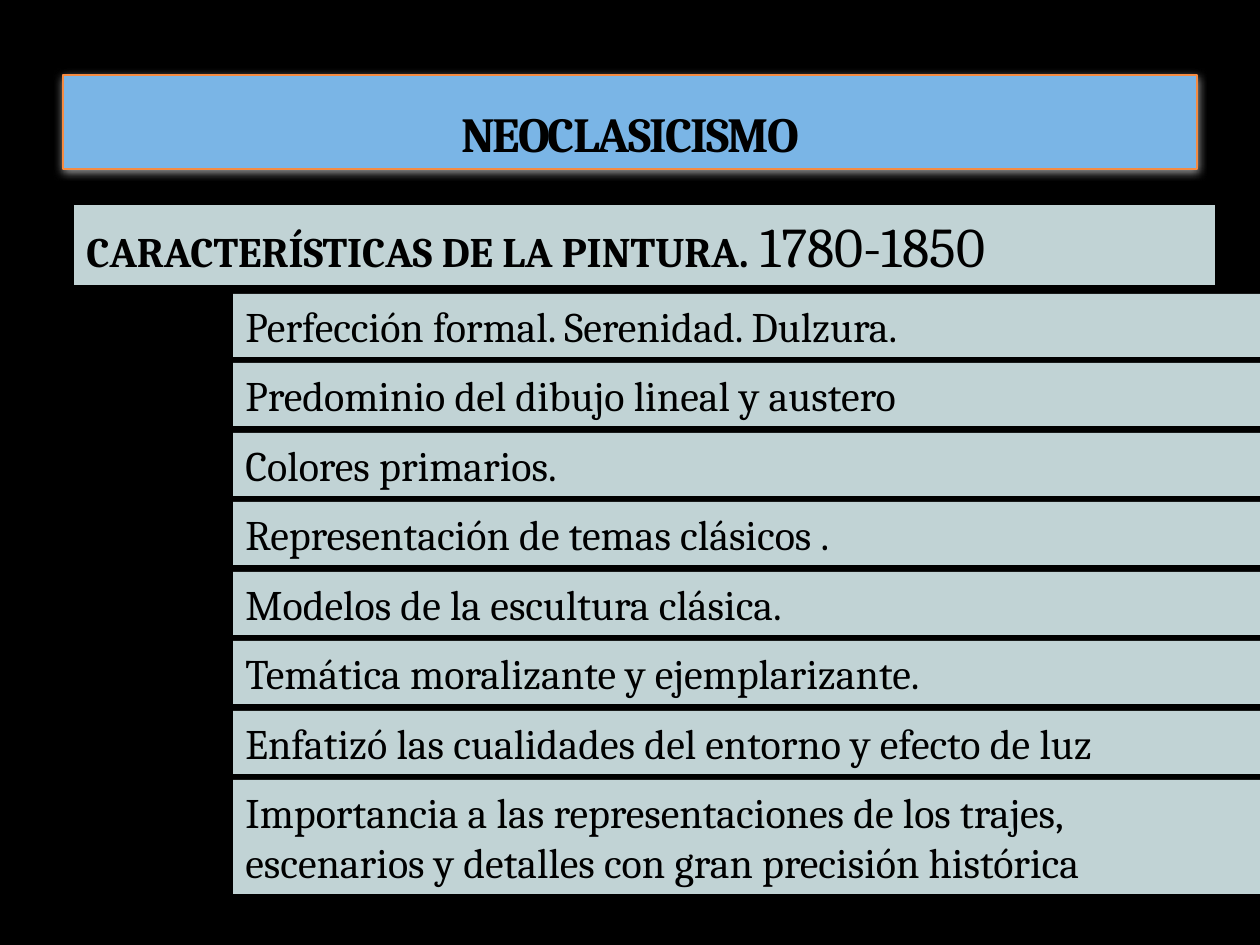
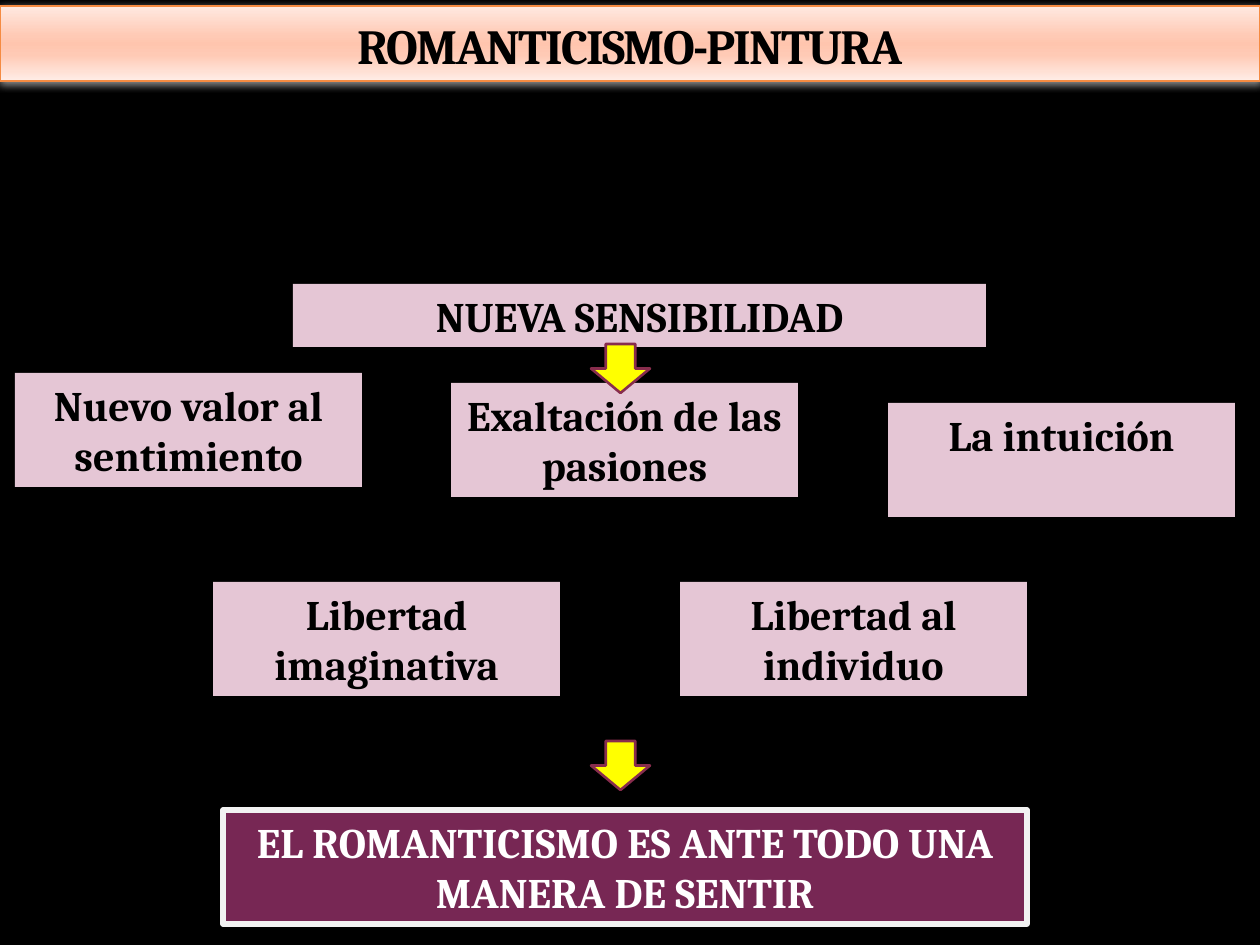
"""Build two slides on Neoclassical and Romantic painting."""
from dataclasses import dataclass
from typing import Optional, Union

from lxml import etree
from pptx import Presentation
from pptx import util as u
from pptx.dml.color import RGBColor
from pptx.enum import shapes, text
from pptx.oxml.ns import qn

PX = 914400 / 126


@dataclass(frozen=True)
class Theme:
    """Colours, font and type sizes of the deck."""
    font: str = "Cambria"
    title_size: int = 28
    body_size: int = 24
    years_size: int = 32
    black: str = "000000"
    white: str = "FFFFFF"
    title_blue: str = "7AB5E6"
    title_edge: str = "F58B42"
    title_peach: tuple[tuple[int, str], ...] = (
        (0, "FFE9E1"), (40, "FFCAB5"), (50, "FFC5AE"),
        (65, "FFCAB5"), (100, "FFEDE7"))
    teal: str = "C1D3D5"
    pink: str = "E5C6D5"
    plum: str = "772754"
    pale: str = "F2F2F2"
    yellow: str = "FFFF00"
    wine: str = "882D4D"


T = Theme()


@dataclass(frozen=True)
class Rect:
    """Position and size in px."""
    left: int
    top: int
    width: int
    height: int

    def emu(self) -> list[int]:
        """Return the four lengths in EMU."""
        return [round(v * PX) for v in (self.left, self.top, self.width, self.height)]


@dataclass(frozen=True)
class Span:
    """A stretch of text with its own size and weight."""
    words: str
    size: int = T.body_size
    bold: bool = False


@dataclass(frozen=True)
class Style:
    """Look of a filled box."""
    fill: str
    color: str = T.black
    line: Optional[str] = None
    line_pt: float = 0
    bold: bool = False
    centred: bool = False


CARD = Style(T.pink, bold=True, centred=True)
ROW = Style(T.teal)
CONCLUSION = Style(T.plum, T.white, T.pale, 3, True, True)
ARROW = Style(T.yellow, line=T.wine, line_pt=1.5)

TRAITS = (
    "Perfección formal. Serenidad. Dulzura.",
    "Predominio del dibujo lineal y austero",
    "Colores primarios.",
    "Representación de temas clásicos .",
    "Modelos de la escultura clásica.",
    "Temática moralizante y ejemplarizante.",
    "Enfatizó las cualidades del entorno y efecto de luz",
    "Importancia a las representaciones de los trajes, "
    "escenarios y detalles con gran precisión histórica",
)
IDEAS = (
    ("Nuevo valor al sentimiento", 15, 373),
    ("Exaltación de las pasiones", 451, 383),
    ("La intuición", 888, 403),
    ("Libertad imaginativa", 213, 582),
    ("Libertad al individuo", 680, 582),
)
ARROW_TOPS = (344, 741)


def rgb(value: str) -> RGBColor:
    """Turn a hex string into a colour."""
    return RGBColor.from_string(value)


def paint(sp, style: Style) -> None:
    """Give a shape its fill and line."""
    sp.fill.solid()
    sp.fill.fore_color.rgb = rgb(style.fill)
    if style.line:
        sp.line.color.rgb = rgb(style.line)
        sp.line.width = u.Pt(style.line_pt)
    else:
        sp.line.fill.background()


def add_box(s, rect: Rect, style: Style, content: Union[str, tuple[Span, ...]] = (),
            kind=shapes.MSO_SHAPE.RECTANGLE):
    """Add a filled shape with one paragraph of text."""
    sp = s.shapes.add_shape(kind, *rect.emu())
    sp.shadow.inherit = False
    paint(sp, style)
    if not content:
        return sp
    tf = sp.text_frame
    tf.word_wrap = True
    tf.vertical_anchor = text.MSO_ANCHOR.TOP
    p = tf.paragraphs[0]
    p.alignment = text.PP_ALIGN.CENTER if style.centred else text.PP_ALIGN.LEFT
    p.font.name = T.font
    p.font.color.rgb = rgb(style.color)
    if isinstance(content, str):
        p.add_run().text = content
        p.font.size = u.Pt(T.body_size)
        p.font.bold = style.bold
        return sp
    for span in content:
        r = p.add_run()
        r.text = span.words
        r.font.size = u.Pt(span.size)
        r.font.bold = span.bold
    return sp


def add_color(parent, value: str):
    """Append a colour element to an XML parent."""
    return etree.SubElement(parent, qn("a:srgbClr"), val=value)


def fill_gradient(sp, stops: tuple[tuple[int, str], ...]) -> None:
    """Fill a shape with a top-to-bottom gradient."""
    sp.fill.gradient()
    sp.fill.gradient_angle = 270
    stop_list = sp._element.spPr.find(".//" + qn("a:gsLst"))
    stop_list.clear()
    for percent, value in stops:
        add_color(etree.SubElement(stop_list, qn("a:gs"), pos=str(percent * 1000)), value)


def add_halo(sp) -> None:
    """Put a soft white shadow around a shape."""
    effects = etree.SubElement(sp._element.spPr, qn("a:effectLst"))
    shadow = etree.SubElement(effects, qn("a:outerShdw"), blurRad="63500", dist="12700",
                              dir="5400000", algn="ctr", rotWithShape="0")
    etree.SubElement(add_color(shadow, T.white), qn("a:alpha"), val="60000")


def add_slide(prs, title: str, rect: Rect, fill: Union[str, tuple[tuple[int, str], ...]]):
    """Add a black slide with a title band."""
    s = prs.slides.add_slide(prs.slide_layouts[5])
    s.background.fill.solid()
    s.background.fill.fore_color.rgb = rgb(T.black)
    sp = s.shapes.title
    sp.left, sp.top, sp.width, sp.height = rect.emu()
    if isinstance(fill, str):
        sp.fill.solid()
        sp.fill.fore_color.rgb = rgb(fill)
    else:
        fill_gradient(sp, fill)
    sp.line.color.rgb = rgb(T.title_edge)
    sp.line.width = u.Pt(1)
    add_halo(sp)
    tf = sp.text_frame
    tf.auto_size = text.MSO_AUTO_SIZE.NONE
    tf.word_wrap = True
    tf.vertical_anchor = text.MSO_ANCHOR.BOTTOM
    p = tf.paragraphs[0]
    p.alignment = text.PP_ALIGN.CENTER
    p.font.name = T.font
    p.font.size = u.Pt(T.title_size)
    p.font.bold = True
    p.font.color.rgb = rgb(T.black)
    r = p.add_run()
    r.text = title
    r._r.get_or_add_rPr().set("spc", "-100")
    return s


def build_neoclassicism(prs) -> None:
    """Build the list of traits of Neoclassical painting."""
    s = add_slide(prs, "NEOCLASICISMO", Rect(63, 75, 1134, 94), T.title_blue)
    add_box(s, Rect(74, 205, 1141, 80), ROW, (
        Span("CARACTERÍSTICAS DE LA PINTURA", bold=True),
        Span(". 1780-1850", T.years_size)))
    for i, trait in enumerate(TRAITS):
        height = 114 if trait == TRAITS[-1] else 63
        add_box(s, Rect(233, 294 + i * 139 // 2, 1027, height), ROW, trait)


def build_romanticism(prs) -> None:
    """Build the map of ideas of Romantic painting."""
    s = add_slide(prs, "ROMANTICISMO-PINTURA", Rect(0, 6, 1260, 75), T.title_peach)
    add_box(s, Rect(293, 284, 693, 63), CARD, "NUEVA SENSIBILIDAD")
    for idea, left, top in IDEAS:
        add_box(s, Rect(left, top, 347, 114), CARD, idea)
    for top in ARROW_TOPS:
        add_box(s, Rect(591, top, 59, 49), ARROW, kind=shapes.MSO_SHAPE.DOWN_ARROW)
    add_box(s, Rect(223, 810, 804, 114), CONCLUSION,
            "EL ROMANTICISMO ES ANTE TODO UNA MANERA DE SENTIR")


def main() -> None:
    """Build and save the deck."""
    prs = Presentation()
    prs.slide_width, prs.slide_height = round(1260 * PX), round(945 * PX)
    build_neoclassicism(prs)
    build_romanticism(prs)
    prs.save("out.pptx")


if __name__ == "__main__":
    main()
